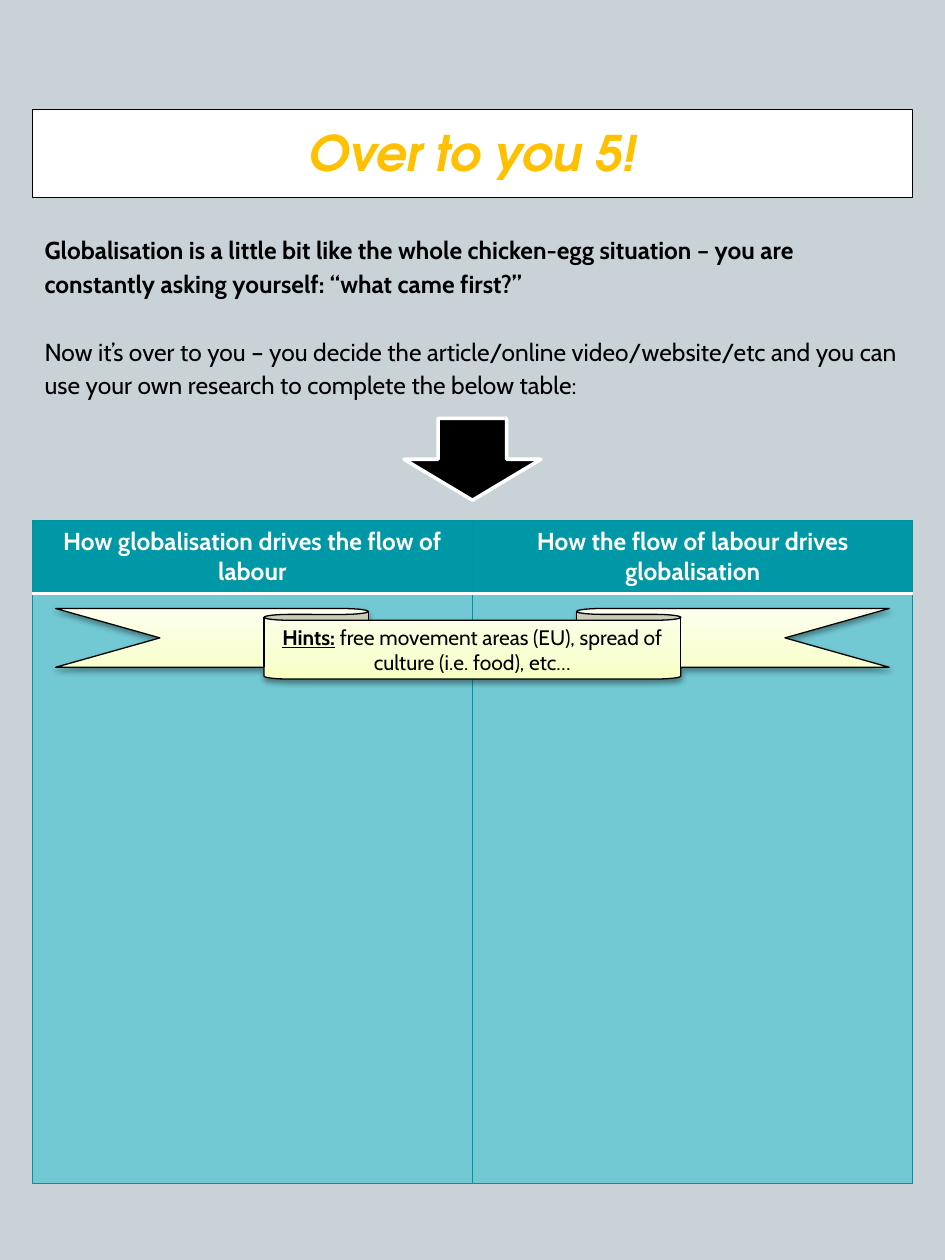
from dataclasses import dataclass

from lxml.etree import SubElement
from pptx import Presentation
from pptx.dml.color import RGBColor
from pptx.enum.shapes import MSO_SHAPE as Preset
from pptx.enum.text import MSO_ANCHOR as Anchor, MSO_AUTO_SIZE as AutoSize, PP_ALIGN as Align
from pptx.oxml import parse_xml
from pptx.oxml.ns import nsdecls, qn
from pptx.util import Inches, Pt


@dataclass(frozen=True)
class Theme:
    background: str = "C9D3D7"
    ink: str = "000000"
    paper: str = "FFFFFF"
    gold: str = "FFC000"
    header: str = "0097A7"
    body: str = "72C9D4"
    border: str = "0094A3"
    ribbon: tuple = ((0, "F7FFC0"), (35, "F9FFD3"), (100, "FDFFEE"))
    heading_font: str = "TeX Gyre Adventor"
    text_font: str = "Cabin"
    heading_size: int = 28
    text_size: int = 14
    hint_size: int = 12


theme = Theme()
presentation = Presentation()
presentation.slide_width, presentation.slide_height = Inches(7.5), Inches(10)
slide = presentation.slides.add_slide(presentation.slide_layouts[5])
slide.background.fill.solid()
slide.background.fill.fore_color.rgb = RGBColor.from_string(theme.background)


def centred_box(top, width, height):
    column, row = presentation.slide_width / 100, presentation.slide_height / 100
    return [int(length) for length in
            ((100 - width) / 2 * column, top * row, width * column, height * row)]


def format_run(run, size, color, bold=False, name=theme.text_font):
    run.font.name, run.font.size, run.font.bold = name, Pt(size), bold
    run.font.color.rgb = RGBColor.from_string(color)


content_width = 93.2

title = slide.shapes.title
title.left, title.top, title.width, title.height = centred_box(8.7, content_width, 7)
title.fill.solid()
title.fill.fore_color.rgb = RGBColor.from_string(theme.paper)
title.line.color.rgb = RGBColor.from_string(theme.ink)
title.line.width = Pt(0.75)
title.text_frame.text = "Over to you 5!"
title.text_frame.auto_size = AutoSize.NONE
title.text_frame.vertical_anchor = Anchor.TOP
title.text_frame.margin_top = title.text_frame.margin_bottom = Inches(0.1)
heading = title.text_frame.paragraphs[0]
heading.alignment = Align.CENTER
format_run(heading.runs[0], theme.heading_size, theme.gold, True, theme.heading_font)
heading.runs[0].font.italic = True

introduction = slide.shapes.add_textbox(*centred_box(17.3, content_width, 15)).text_frame
introduction.word_wrap = True
introduction.margin_top = introduction.margin_bottom = Inches(0.1)
introduction.text = (
    "Globalisation is a little bit like the whole chicken-egg situation – you are "
    "constantly asking yourself: “what came first?”\n"
    "Now it’s over to you – you decide the article/online video/website/etc and you "
    "can use your own research to complete the below table:"
)
for paragraph, bold, gap in zip(introduction.paragraphs, (True, False), (0, 19.5)):
    paragraph.line_spacing = 1.15
    paragraph.space_before = Pt(gap)
    format_run(paragraph.runs[0], theme.text_size, theme.ink, bold)

arrow = slide.shapes.add_shape(Preset.DOWN_ARROW, *centred_box(33.2, 14.5, 6.5))
arrow.shadow.inherit = False
arrow.fill.solid()
arrow.fill.fore_color.rgb = RGBColor.from_string(theme.ink)
arrow.line.color.rgb = RGBColor.from_string(theme.paper)
arrow.line.width = Pt(2)

header_height, body_height = 5.8, 46.8
table = slide.shapes.add_table(
    2, 2, *centred_box(41.3, content_width, header_height + body_height)).table
for row, height in zip(table.rows, (header_height, body_height)):
    row.height = int(presentation.slide_height * height / 100)
headings = ("How globalisation drives the flow of labour",
            "How the flow of labour drives globalisation")
thin, thick = (theme.border, 0.75), (theme.paper, 2)
for row_index, fill in enumerate((theme.header, theme.body)):
    for column_index, text in enumerate(headings):
        cell = table.cell(row_index, column_index)
        top, bottom = (thin, thick) if row_index == 0 else (thick, thin)
        properties = cell._tc.get_or_add_tcPr()
        for side, (color, width) in zip("LRTB", (thin, thin, top, bottom)):
            line = SubElement(properties, qn(f"a:ln{side}"), w=str(Pt(width)))
            SubElement(SubElement(line, qn("a:solidFill")), qn("a:srgbClr"), val=color)
        cell.fill.solid()
        cell.fill.fore_color.rgb = RGBColor.from_string(fill)
        if row_index == 0:
            cell.text_frame.text = text
            paragraph = cell.text_frame.paragraphs[0]
            paragraph.alignment = Align.CENTER
            format_run(paragraph.runs[0], theme.text_size, theme.paper, True)

ribbon = slide.shapes.add_shape(Preset.DOWN_RIBBON, *centred_box(48.3, 88.2, 5.6))
ribbon.line.color.rgb = RGBColor.from_string(theme.ink)
ribbon.line.width = Pt(0.75)
ribbon.shadow.inherit = False
stops = "".join(f'<a:gs pos="{position * 1000}"><a:srgbClr val="{color}"/></a:gs>'
                for position, color in theme.ribbon)
shape_properties = ribbon._element.spPr
shape_properties.find(qn("a:prstGeom")).addnext(parse_xml(
    f'<a:gradFill {nsdecls("a")}><a:gsLst>{stops}</a:gsLst>'
    '<a:lin ang="16200000" scaled="0"/></a:gradFill>'))
shape_properties.find(qn("a:effectLst")).append(parse_xml(
    f'<a:outerShdw {nsdecls("a")} blurRad="{Pt(3.1)}" dist="{Pt(1.6)}" dir="5400000" '
    f'rotWithShape="0"><a:srgbClr val="{theme.ink}"><a:alpha val="38000"/></a:srgbClr>'
    '</a:outerShdw>'))
ribbon.text_frame.vertical_anchor = Anchor.MIDDLE
hint = ribbon.text_frame.paragraphs[0]
hint.alignment = Align.CENTER
for text, emphasis in (("Hints:", True),
                       (" free movement areas (EU), spread of culture (i.e. food), etc…", False)):
    run = hint.add_run()
    run.text = text
    format_run(run, theme.hint_size, theme.ink, emphasis)
    run.font.underline = emphasis

presentation.save("out.pptx")
